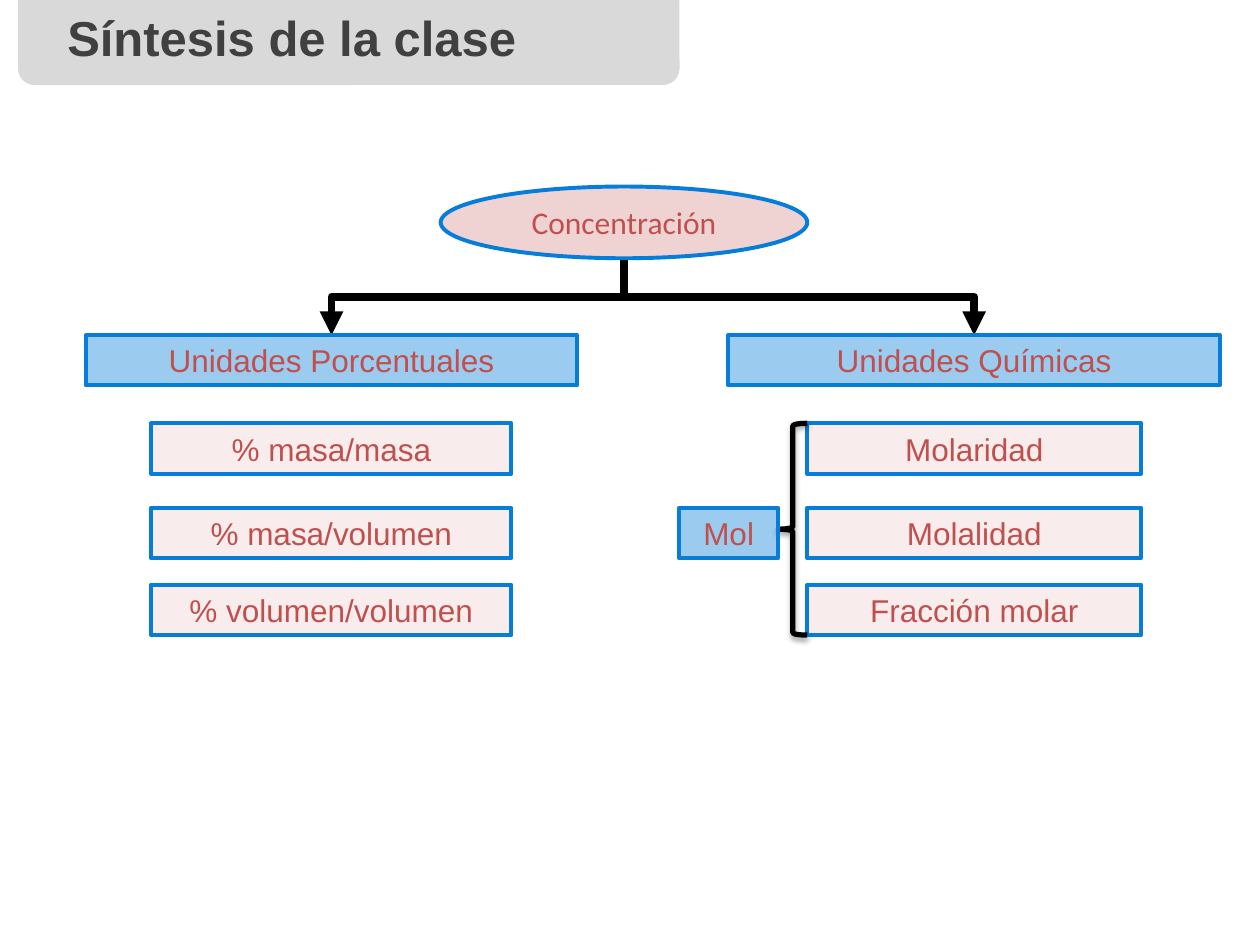
from lxml.etree import SubElement
from pptx import Presentation
from pptx.dml.color import RGBColor
from pptx.enum.shapes import MSO_CONNECTOR as Connector, MSO_SHAPE as Shape
from pptx.enum.text import MSO_ANCHOR as Anchor, PP_ALIGN as Align
from pptx.oxml.ns import qn
from pptx.util import Pt

BLACK = RGBColor(0x00, 0x00, 0x00)
DARK_GRAY = RGBColor(0x40, 0x40, 0x40)
LIGHT_GRAY = RGBColor(0xD9, 0xD9, 0xD9)
BLUE = RGBColor(0x06, 0x7D, 0xD9)
RED = RGBColor(0xC0, 0x50, 0x4D)

BOX_HEIGHT = 28.8
UNITS_TOP = 191.5
ROW_TOPS = (241.9, 290.2, 334.1)
ROOT_CENTER = 356.4
ROOT_BOTTOM = 147.6
PERCENT_CENTER = 189.4
CHEMICAL_CENTER = 556.6


class ConceptMap:
    font = "Arial"
    size = 18

    def __init__(self, slide):
        self.slide = slide

    def set_label(self, shape, text, color, size, font, bold=False):
        frame = shape.text_frame
        frame.text = text
        frame.vertical_anchor = Anchor.MIDDLE
        paragraph = frame.paragraphs[0]
        paragraph.alignment = Align.CENTER
        style = paragraph.runs[0].font
        style.name, style.size, style.bold = font, Pt(size), bold
        style.color.rgb = color

    def plain_shape(self, kind, left, top, width, height):
        shape = self.slide.shapes.add_shape(kind, Pt(left), Pt(top), Pt(width), Pt(height))
        shape.shadow.inherit = False
        return shape

    def title(self, text, left, top, width, height):
        band = self.plain_shape(Shape.ROUNDED_RECTANGLE, 10.3, -7.9, 378, 56.5)
        band.fill.solid()
        band.fill.fore_color.rgb = LIGHT_GRAY
        band.line.fill.background()
        title = self.slide.shapes.title
        title.left, title.top, title.width, title.height = map(Pt, (left, top, width, height))
        self.set_label(title, text, DARK_GRAY, 28, self.font, bold=True)
        title.text_frame.word_wrap = False
        band._element.addnext(title._element)

    def node(self, text, left, top, width, color, opacity,
             height=BOX_HEIGHT, kind=Shape.RECTANGLE, font=font):
        node = self.plain_shape(kind, left, top, width, height)
        node.fill.solid()
        node.fill.fore_color.rgb = color
        tint = node._element.spPr.find(qn("a:solidFill"))[0]
        SubElement(tint, qn("a:alpha"), val=str(opacity * 1000))
        node.line.color.rgb = BLUE
        node.line.width = Pt(2.25)
        self.set_label(node, text, RED, self.size, font)

    def branch(self, start_x, start_y, end_x, end_y):
        center_x, center_y = (start_x + end_x) / 2, (start_y + end_y) / 2
        rightward = end_x > start_x
        half_drop = (end_y - start_y) / 2 * (-1 if rightward else 1)
        half_span = abs(end_x - start_x) / 2
        branch = self.slide.shapes.add_connector(
            Connector.ELBOW,
            Pt(center_x - half_drop), Pt(center_y - half_span),
            Pt(center_x + half_drop), Pt(center_y + half_span))
        branch.line.color.rgb = BLACK
        branch.line.width = Pt(4.5)
        properties = branch._element.spPr
        properties.find(qn("a:xfrm")).set("rot", str((270 if rightward else 90) * 60000))
        SubElement(properties.find(qn("a:ln")), qn("a:tailEnd"), type="triangle")
        SubElement(properties, qn("a:effectLst"))

    def brace(self, left, top, width, height):
        brace = self.plain_shape(Shape.LEFT_BRACE, left, top, width, height)
        brace.fill.background()
        brace.line.color.rgb = BLACK
        brace.line.width = Pt(3)
        effects = brace._element.spPr.find(qn("a:effectLst"))
        shadow = SubElement(effects, qn("a:outerShdw"), blurRad=str(Pt(3.1)),
                            dist=str(Pt(1.8)), dir="5400000", rotWithShape="0")
        color = SubElement(shadow, qn("a:srgbClr"), val=str(BLACK))
        SubElement(color, qn("a:alpha"), val="35000")


def main():
    presentation = Presentation()
    presentation.slide_width, presentation.slide_height = Pt(720), Pt(540)
    slide = presentation.slides.add_slide(presentation.slide_layouts[5])
    concept_map = ConceptMap(slide)

    concept_map.title("Síntesis de la clase", 31, 0.7, 271.4, 41)
    for center in (CHEMICAL_CENTER, PERCENT_CENTER):
        concept_map.branch(ROOT_CENTER, ROOT_BOTTOM, center, UNITS_TOP)
    concept_map.node("Concentración", 251.8, 106.6, 209.5, RED, 25,
                     height=41, kind=Shape.OVAL, font="Calibri")

    columns = (
        ("Unidades Porcentuales", PERCENT_CENTER, 86.4, 205.9,
         ("% masa/masa", "% masa/volumen", "% volumen/volumen")),
        ("Unidades Químicas", CHEMICAL_CENTER, 461.3, 190.8,
         ("Molaridad", "Molalidad", "Fracción molar")),
    )
    for heading, center, left, width, units in columns:
        concept_map.node(heading, center - 140.4, UNITS_TOP, 280.8, BLUE, 40)
        for unit, top in zip(units, ROW_TOPS):
            concept_map.node(unit, left, top, width, RED, 10)

    concept_map.brace(444.8, ROW_TOPS[0], 16.5, ROW_TOPS[-1] + BOX_HEIGHT - ROW_TOPS[0])
    concept_map.node("Mol", 388, ROW_TOPS[1], 56.8, BLUE, 40)
    presentation.save("out.pptx")


if __name__ == "__main__":
    main()
